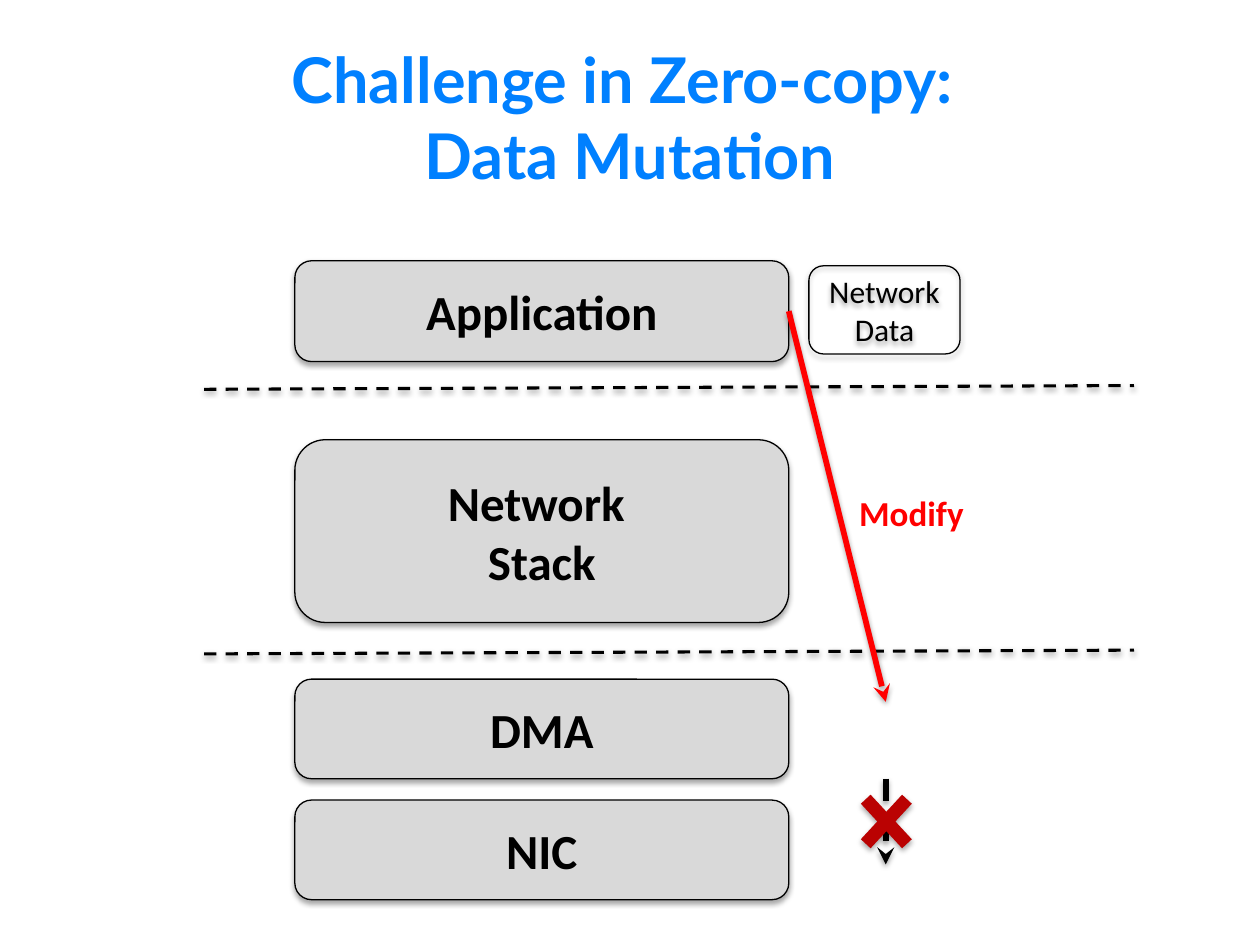
from pptx import Presentation
from pptx.dml.color import RGBColor
from pptx.enum.dml import MSO_LINE
from pptx.enum.shapes import MSO_CONNECTOR, MSO_SHAPE
from pptx.enum.text import MSO_ANCHOR, MSO_AUTO_SIZE, PP_ALIGN
from pptx.oxml import parse_xml
from pptx.oxml.ns import nsdecls
from pptx.util import Inches, Pt

ROUNDED = MSO_SHAPE.ROUNDED_RECTANGLE
CROSS = MSO_SHAPE.MATH_MULTIPLY
STRAIGHT = MSO_CONNECTOR.STRAIGHT
DASH = MSO_LINE.DASH
CENTER = PP_ALIGN.CENTER
MIDDLE = MSO_ANCHOR.MIDDLE
FIT_SHAPE = MSO_AUTO_SIZE.SHAPE_TO_FIT_TEXT
RIGHT_SIDE = 3

BLACK = RGBColor(0x00, 0x00, 0x00)
GRAY = RGBColor(0xD9, 0xD9, 0xD9)
BLUE = RGBColor(0x00, 0x80, 0xFF)
RED = RGBColor(0xFF, 0x00, 0x00)
DARK_RED = RGBColor(0xBA, 0x02, 0x02)


class SlideBuilder:
    """Holds the style and the current slide."""

    body_font = "Calibri"
    title_font = "Lato"

    def __init__(self, slide):
        self.slide = slide

    def set_text(self, frame, lines, size, color, bold, font=body_font, align=None):
        for index, line in enumerate(lines):
            para = frame.paragraphs[0] if index == 0 else frame.add_paragraph()
            para.text = line
            para.alignment = align
            para.font.name = font
            para.font.size = Pt(size)
            para.font.bold = bold
            para.font.color.rgb = color

    def shadow(self, shape, opacity, distance):
        shape._element.spPr.append(parse_xml(
            f'<a:effectLst {nsdecls("a")}>'
            f'<a:outerShdw blurRad="{Pt(3.1)}" dist="{Pt(distance)}" '
            'dir="5400000" rotWithShape="0"><a:srgbClr val="000000">'
            f'<a:alpha val="{opacity * 1000}"/></a:srgbClr>'
            '</a:outerShdw></a:effectLst>'))

    def title(self, text, left, top, width, height):
        title = self.slide.shapes.title
        title.left, title.top = Inches(left), Inches(top)
        title.width, title.height = Inches(width), Inches(height)
        title.text_frame.vertical_anchor = MIDDLE
        self.set_text(title.text_frame, [text], 36, BLUE, True, self.title_font, CENTER)

    def shape(self, kind, left, top, width, height, fill=None, outline=None):
        shape = self.slide.shapes.add_shape(
            kind, Inches(left), Inches(top), Inches(width), Inches(height))
        if fill is None:
            shape.fill.background()
        else:
            shape.fill.solid()
            shape.fill.fore_color.rgb = fill
        if outline is None:
            shape.line.fill.background()
        else:
            shape.line.color.rgb = outline
            shape.line.width = Pt(0.75)
        self.shadow(shape, 35, 1.8)
        return shape

    def box(self, lines, left, top, width, height, size=28, fill=GRAY, bold=True):
        box = self.shape(ROUNDED, left, top, width, height, fill, BLACK)
        box.text_frame.word_wrap = True
        box.text_frame.vertical_anchor = MIDDLE
        self.set_text(box.text_frame, lines, size, BLACK, bold, align=CENTER)
        return box

    def label(self, text, left, top, width, height, size, color):
        label = self.slide.shapes.add_textbox(
            Inches(left), Inches(top), Inches(width), Inches(height))
        label.text_frame.word_wrap = False
        label.text_frame.auto_size = FIT_SHAPE
        self.set_text(label.text_frame, [text], size, color, True)

    def line(self, start, end, color, width, dashed=False, arrow=False):
        line = self.slide.shapes.add_connector(
            STRAIGHT, *(Inches(value) for value in start + end))
        line.line.color.rgb = color
        line.line.width = Pt(width)
        if dashed:
            line.line.dash_style = DASH
        if arrow:
            line.line._get_or_add_ln().append(
                parse_xml(f'<a:tailEnd {nsdecls("a")} type="stealth"/>'))
        self.shadow(line, 38, 1.6)
        return line


def main():
    deck = Presentation()
    deck.slide_width, deck.slide_height = Inches(10), Inches(7.5)
    page = SlideBuilder(deck.slides.add_slide(deck.slide_layouts[5]))

    page.title("Challenge in Zero-copy: \vData Mutation", 0.5, 0.3, 9, 1.25)

    # Layers of the network path
    layers = [
        (["Application"], 2.07, 0.8),
        (["Network ", "Stack"], 3.49, 1.45),
        (["DMA"], 5.39, 0.79),
        (["NIC"], 6.35, 0.79),
    ]
    application, *_ = [page.box(lines, 2.34, top, 3.92, height)
                       for lines, top, height in layers]

    # Boundaries between application, kernel and hardware
    for y in (3.09, 5.19):
        page.line((1.62, y), (9, y - 0.03), BLACK, 1.75, dashed=True)

    # Data and its modification by the application
    page.box(["Network Data"], 6.42, 2.11, 1.2, 0.7, size=18, fill=None, bold=False)
    modify = page.line((6.26, 2.47), (7.03, 5.57), RED, 3.25, arrow=True)
    modify.begin_connect(application, RIGHT_SIDE)
    page.label("Modify", 6.72, 3.85, 1.04, 0.44, 20, RED)

    # Blocked transfer from DMA to NIC
    page.line((7.03, 6.18), (7.03, 6.86), BLACK, 3.25, dashed=True, arrow=True)
    cross = page.shape(CROSS, 6.72, 6.18, 0.63, 0.68, DARK_RED)
    cross.adjustments[0] = 0.167

    deck.save("out.pptx")


if __name__ == "__main__":
    main()
